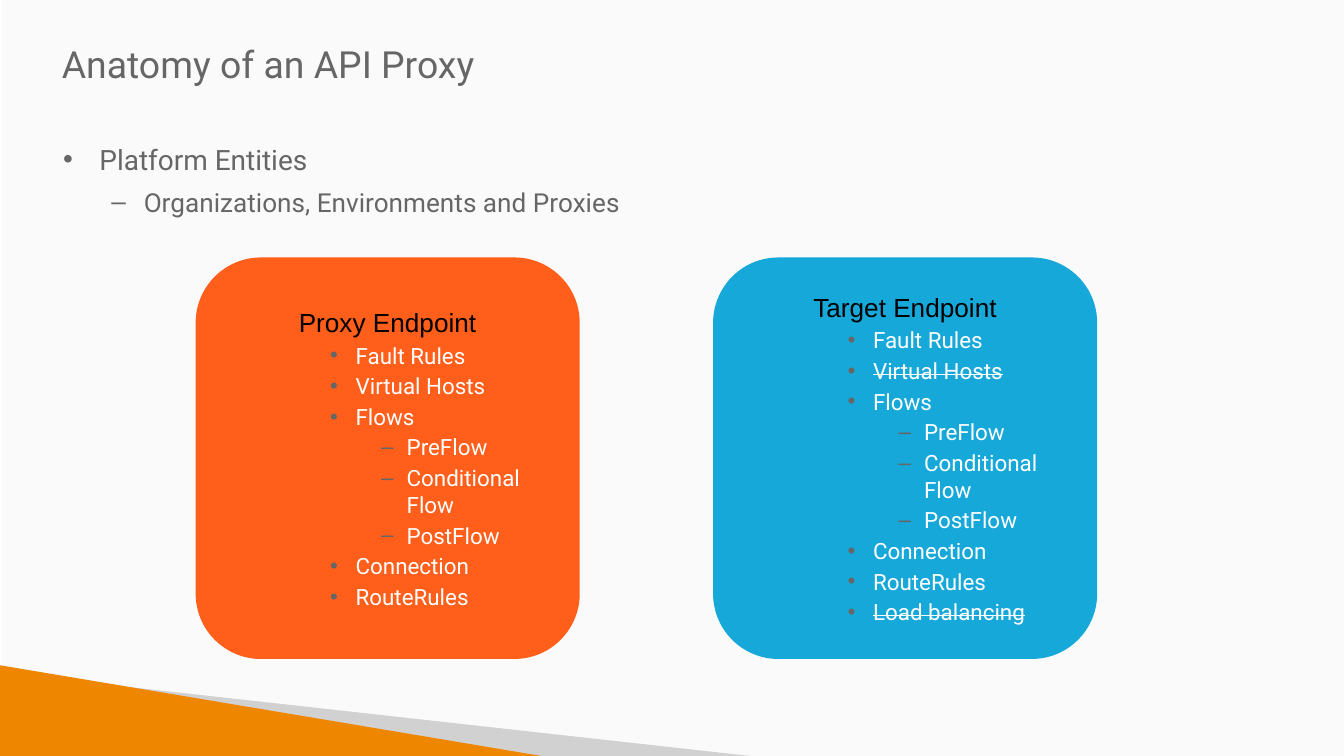
from dataclasses import dataclass

from lxml import etree
from pptx import Presentation
from pptx import util as u
from pptx.dml.color import RGBColor
from pptx.enum import shapes, text
from pptx.oxml import ns

EMU_PER_PX = 4572
WIDTH, HEIGHT = 2000, 1125
COLORS = {
    "paper": "FAFAFA",
    "shade": "D1D1D1",
    "accent": "EF8600",
    "gray": "666666",
    "proxy": "FF5E1B",
    "target": "17A8DA",
    "black": "000000",
    "white": "FFFFFF",
}


@dataclass(frozen=True)
class Style:
    size: int
    color: str
    font: str = "Roboto"
    level: int = 0
    bullet: str = ""
    margin: int = 0
    indent: int = 0
    before: int = 0
    spacing: float = 1.0
    centered: bool = False


@dataclass(frozen=True)
class Line:
    wording: str
    style: Style
    struck: bool = False


@dataclass(frozen=True)
class Box:
    left: int
    top: int
    width: int
    height: int


@dataclass(frozen=True)
class Endpoint:
    name: str
    color: str
    left: int
    lines: tuple[Line, ...]


@dataclass(frozen=True)
class Wedge:
    color: str
    points: tuple[tuple[int, int], ...]


TITLE = Style(20, "gray")
TOPIC = Style(15, "gray", bullet="•", margin=56, indent=-54, before=3, spacing=1.15)
SUBTOPIC = Style(14, "gray", level=1, bullet="–", margin=122, indent=-48, before=3, spacing=1.15)
HEADING = Style(14, "black", font="Arial", centered=True)
ITEM = Style(12, "white", level=2, bullet="•", margin=188, indent=-38, before=2)
SUBITEM = Style(12, "white", level=3, bullet="–", margin=264, indent=-38, before=2)

FLOWS = (
    Line("Flows", ITEM),
    Line("PreFlow", SUBITEM),
    Line("Conditional Flow", SUBITEM),
    Line("PostFlow", SUBITEM),
    Line("Connection", ITEM),
    Line("RouteRules", ITEM),
)
FAULT_RULES = Line("Fault Rules", ITEM)
ENDPOINTS = (
    Endpoint("Proxy Endpoint", "proxy", 294,
             (FAULT_RULES, Line("Virtual Hosts", ITEM), *FLOWS)),
    Endpoint("Target Endpoint", "target", 1064,
             (FAULT_RULES, Line("Virtual Hosts", ITEM, struck=True), *FLOWS,
              Line("Load balancing", ITEM, struck=True))),
)
WEDGES = (
    Wedge("shade", ((170, 1020), (1116, HEIGHT), (802, HEIGHT))),
    Wedge("accent", ((0, 990), (0, HEIGHT), (806, HEIGHT))),
)


def px(length: int) -> u.Emu:
    return u.Emu(length * EMU_PER_PX)


def rgb(name: str) -> RGBColor:
    return RGBColor.from_string(COLORS[name])


def place(box: Box) -> tuple[u.Emu, ...]:
    return px(box.left), px(box.top), px(box.width), px(box.height)


def paint(shape, color: str) -> None:
    shape.shadow.inherit = False
    shape.fill.solid()
    shape.fill.fore_color.rgb = rgb(color)
    shape.line.fill.background()


def add_bullet(paragraph, style: Style) -> None:
    properties = paragraph._p.get_or_add_pPr()
    properties.set("marL", str(px(style.margin)))
    properties.set("indent", str(px(style.indent)))
    color = etree.SubElement(properties, ns.qn("a:buClr"))
    etree.SubElement(color, ns.qn("a:srgbClr"), val=COLORS["gray"])
    etree.SubElement(properties, ns.qn("a:buFont"), typeface="Arial")
    etree.SubElement(properties, ns.qn("a:buChar"), char=style.bullet)


def write_lines(frame, lines: tuple[Line, ...]) -> None:
    frame.word_wrap = True
    for index, line in enumerate(lines):
        style = line.style
        paragraph = frame.add_paragraph() if index else frame.paragraphs[0]
        paragraph.level = style.level
        paragraph.alignment = text.PP_ALIGN.CENTER if style.centered else text.PP_ALIGN.LEFT
        paragraph.line_spacing = style.spacing
        paragraph.space_before = u.Pt(style.before)
        if style.bullet:
            add_bullet(paragraph, style)
        paragraph.font.name = style.font
        paragraph.font.size = u.Pt(style.size)
        paragraph.font.color.rgb = rgb(style.color)
        run = paragraph.add_run()
        run.text = line.wording
        if line.struck:
            run._r.get_or_add_rPr().set("strike", "sngStrike")


def add_text(slide, box: Box, anchor: text.MSO_ANCHOR, lines: tuple[Line, ...]) -> None:
    frame = slide.shapes.add_textbox(*place(box)).text_frame
    frame.margin_left = frame.margin_right = px(14)
    frame.margin_top = frame.margin_bottom = px(8)
    frame.vertical_anchor = anchor
    write_lines(frame, lines)


def add_wedge(slide, wedge: Wedge) -> None:
    start, *others = wedge.points
    builder = slide.shapes.build_freeform(*start, scale=EMU_PER_PX)
    builder.add_line_segments(others, close=True)
    paint(builder.convert_to_shape(), wedge.color)


def add_endpoint(slide, endpoint: Endpoint) -> None:
    box = Box(endpoint.left, 386, 566, 592)
    shape = slide.shapes.add_shape(shapes.MSO_SHAPE.ROUNDED_RECTANGLE, *place(box))
    paint(shape, endpoint.color)
    shape.line.color.rgb = rgb(endpoint.color)
    shape.line.width = u.Pt(2)
    shape.text_frame.vertical_anchor = text.MSO_ANCHOR.MIDDLE
    write_lines(shape.text_frame, (Line(endpoint.name, HEADING), *endpoint.lines))


def main() -> None:
    presentation = Presentation()
    presentation.slide_width = px(WIDTH)
    presentation.slide_height = px(HEIGHT)
    slide = presentation.slides.add_slide(presentation.slide_layouts[6])

    paper = Box(2, 0, WIDTH - 2, HEIGHT)
    paint(slide.shapes.add_shape(shapes.MSO_SHAPE.RECTANGLE, *place(paper)), "paper")
    for wedge in WEDGES:
        add_wedge(slide, wedge)
    add_text(slide, Box(78, 196, 1812, 864), text.MSO_ANCHOR.TOP, (
        Line("Platform Entities", TOPIC),
        Line("Organizations, Environments and Proxies", SUBTOPIC),
    ))
    add_text(slide, Box(78, 40, 1706, 110), text.MSO_ANCHOR.MIDDLE,
             (Line("Anatomy of an API Proxy", TITLE),))
    for endpoint in ENDPOINTS:
        add_endpoint(slide, endpoint)
    presentation.save("out.pptx")


if __name__ == "__main__":
    main()
